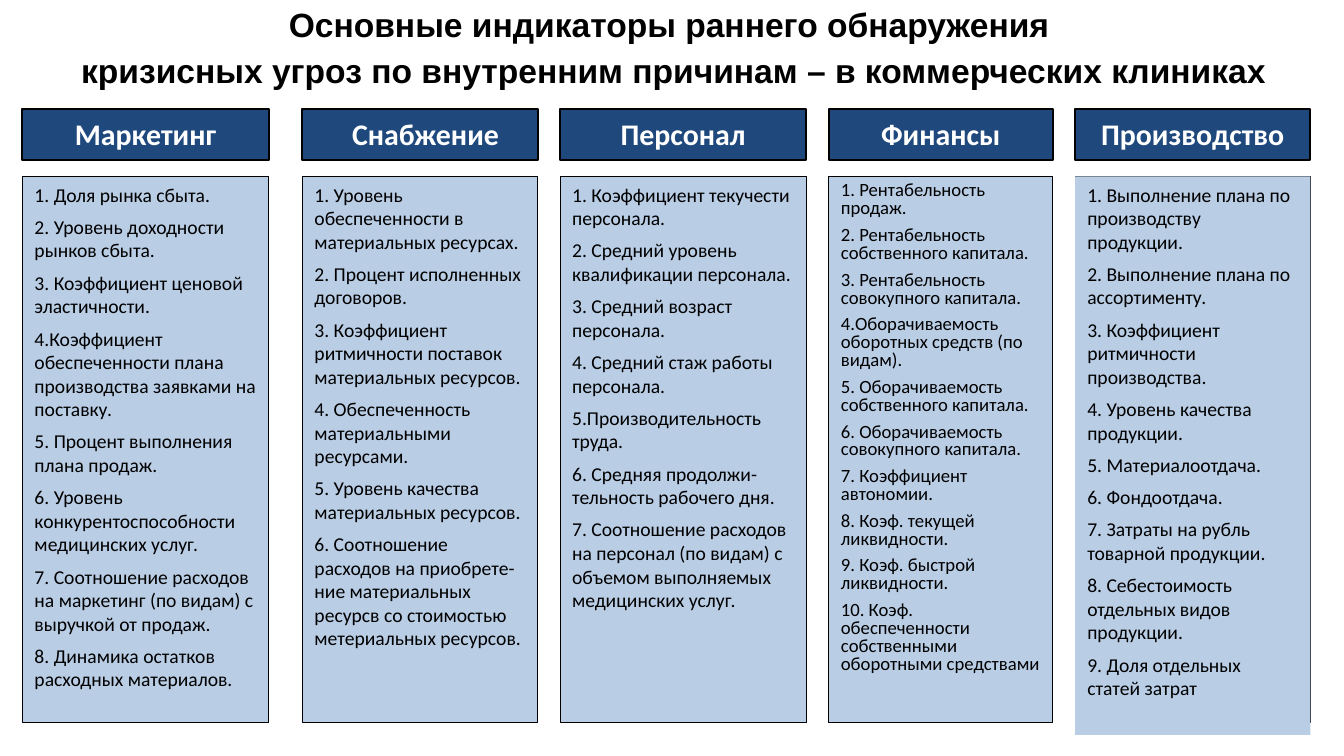
import pptx
import pptx.dml.color
import pptx.enum.shapes
import pptx.enum.text
import pptx.util

COLORS = {
    "heading": "1F497D",
    "panel": "B9CDE5",
    "accent": "FFFF99",
    "border": "000000",
    "text": "000000",
    "heading_text": "FFFFFF",
}

# Grid: 120 columns by 90 rows over the whole slide
WIDTH, HEIGHT = pptx.util.Inches(20), pptx.util.Inches(11.25)
COLUMN, ROW = WIDTH / 120, HEIGHT / 90
HEADING_ROW, HEADING_ROWS = 13, 6
PANEL_ROW, PANEL_ROWS = 21, 65

ALIGN = pptx.enum.text.PP_ALIGN
TITLE_FORMAT = {"font": {"name": "Arial", "size": pptx.util.Pt(36), "bold": True},
                "paragraph": {"alignment": ALIGN.CENTER, "line_spacing": 0.7},
                "gap": 20, "color": "text"}
HEADING_FORMAT = {"font": {"name": "Calibri", "size": pptx.util.Pt(32), "bold": True},
                  "paragraph": {"alignment": ALIGN.CENTER},
                  "gap": 0, "color": "heading_text"}
LIST_FORMAT = {"font": {"name": "Calibri", "size": pptx.util.Pt(21), "bold": False},
               "paragraph": {"alignment": ALIGN.LEFT},
               "gap": 9.4, "color": "text"}
DENSE_FORMAT = {"font": {"name": "Calibri", "size": pptx.util.Pt(20), "bold": False},
                "paragraph": {"alignment": ALIGN.LEFT, "line_spacing": 0.8},
                "gap": 9.4, "color": "text"}

TITLE = ["Основные индикаторы раннего обнаружения",
         " кризисных угроз по внутренним причинам – в коммерческих клиниках"]

# Each group: left column, width in columns, heading span, list height in rows
GROUPS = [
    {"heading": "Маркетинг", "left": 2, "width": 22, "label": (2, 22), "rows": 65,
     "items": [
         "1. Доля рынка сбыта.",
         "2. Уровень доходности рынков сбыта.",
         "3. Коэффициент ценовой эластичности.",
         "4.Коэффициент обеспеченности плана производства заявками на поставку.",
         "5. Процент выполнения плана продаж.",
         "6. Уровень конкурентоспособности медицинских услуг.",
         "7. Соотношение расходов на маркетинг (по видам) с выручкой от продаж.",
         "8. Динамика остатков расходных материалов."]},
    {"heading": "Снабжение", "left": 27, "width": 21, "label": (29, 18), "rows": 59.4,
     "items": [
         "1. Уровень обеспеченности в материальных ресурсах.",
         "2. Процент исполненных договоров.",
         "3. Коэффициент ритмичности поставок материальных ресурсов.",
         "4. Обеспеченность материальными ресурсами.",
         "5. Уровень качества материальных ресурсов.",
         "6. Соотношение расходов на приобрете-ние материальных ресурсв "
         "со стоимостью метериальных ресурсов."]},
    {"heading": "Персонал", "left": 50, "width": 22, "label": (50, 22), "rows": 59.4,
     "items": [
         "1. Коэффициент текучести персонала.",
         "2. Средний уровень квалификации персонала.",
         "3. Средний возраст персонала.",
         "4. Средний стаж работы персонала.",
         "5.Производительность труда.",
         "6. Средняя продолжи-тельность рабочего дня.",
         "7. Соотношение расходов на персонал (по видам) с объемом "
         "выполняемых медицинских услуг."]},
    {"heading": "Финансы", "left": 74, "width": 20, "label": (75, 18), "rows": 66.6,
     "format": DENSE_FORMAT,
     "items": [
         "1. Рентабельность продаж.",
         "2. Рентабельность собственного капитала.",
         "3. Рентабельность совокупного капитала.",
         "4.Оборачиваемость оборотных средств (по видам).",
         "5. Оборачиваемость собственного капитала.",
         "6. Оборачиваемость совокупного капитала.",
         "7. Коэффициент автономии.",
         "8. Коэф. текущей ликвидности.",
         "9. Коэф. быстрой ликвидности.",
         "10. Коэф. обеспеченности собственными оборотными средствами"]},
    {"heading": "Производство", "left": 96, "width": 21, "label": (96, 21), "rows": 66.5,
     "panel": "accent", "list_fill": "panel",
     "items": [
         "1. Выполнение плана по производству продукции.",
         "2. Выполнение плана по ассортименту.",
         "3. Коэффициент ритмичности производства.",
         "4. Уровень качества продукции.",
         "5. Материалоотдача.",
         "6. Фондоотдача.",
         "7. Затраты на рубль товарной продукции.",
         "8. Себестоимость отдельных видов продукции.",
         "9. Доля отдельных статей затрат"]},
]


def rgb(name):
    return pptx.dml.color.RGBColor.from_string(COLORS[name])


def to_lengths(box):
    left, top, width, height = box
    return [pptx.util.Emu(round(value)) for value in
            (left * COLUMN, top * ROW, width * COLUMN, height * ROW)]


def add_panel(slide, box, fill, line_width):
    shape = slide.shapes.add_shape(pptx.enum.shapes.MSO_SHAPE.RECTANGLE, *to_lengths(box))
    shape.shadow.inherit = False
    shape.fill.solid()
    shape.fill.fore_color.rgb = rgb(fill)
    shape.line.color.rgb = rgb("border")
    shape.line.width = pptx.util.Pt(line_width)


def add_text(slide, box, lines, style, fill=None):
    shape = slide.shapes.add_textbox(*to_lengths(box))
    if fill:
        shape.fill.solid()
        shape.fill.fore_color.rgb = rgb(fill)
    frame = shape.text_frame
    horizontal, vertical = pptx.util.Inches(0.18), pptx.util.Inches(0.09)
    frame_format = {"word_wrap": True, "margin_left": horizontal, "margin_right": horizontal,
                    "margin_top": vertical, "margin_bottom": vertical,
                    "vertical_anchor": pptx.enum.text.MSO_ANCHOR.TOP}
    for name, value in frame_format.items():
        setattr(frame, name, value)
    for index, line in enumerate(lines):
        paragraph = frame.add_paragraph() if index else frame.paragraphs[0]
        for name, value in style["paragraph"].items():
            setattr(paragraph, name, value)
        if index:
            paragraph.space_before = pptx.util.Pt(style["gap"])
        run = paragraph.add_run()
        run.text = line
        for name, value in style["font"].items():
            setattr(run.font, name, value)
        run.font.color.rgb = rgb(style["color"])


def add_group(slide, group, box):
    left, top, width, height = box
    # Heading bar and its label
    add_panel(slide, (left, top, width, HEADING_ROWS), "heading", 2.25)
    label_left, label_width = group["label"]
    add_text(slide, (label_left, top, label_width, HEADING_ROWS),
             [group["heading"]], HEADING_FORMAT)
    # Panel and its list of indicators
    panel_top = top + height - PANEL_ROWS
    add_panel(slide, (left, panel_top, width, PANEL_ROWS), group.get("panel", "panel"), 0.75)
    add_text(slide, (left, panel_top, width, group["rows"]), group["items"],
             group.get("format", LIST_FORMAT), group.get("list_fill"))


def main():
    presentation = pptx.Presentation()
    presentation.slide_width, presentation.slide_height = WIDTH, HEIGHT
    slide = presentation.slides.add_slide(presentation.slide_layouts[6])
    # Title
    add_text(slide, (1, 1, 117.5, 10.6), TITLE, TITLE_FORMAT)
    # Groups of indicators
    height = PANEL_ROW + PANEL_ROWS - HEADING_ROW
    for group in GROUPS:
        add_group(slide, group, (group["left"], HEADING_ROW, group["width"], height))
    presentation.save("out.pptx")


if __name__ == "__main__":
    main()
